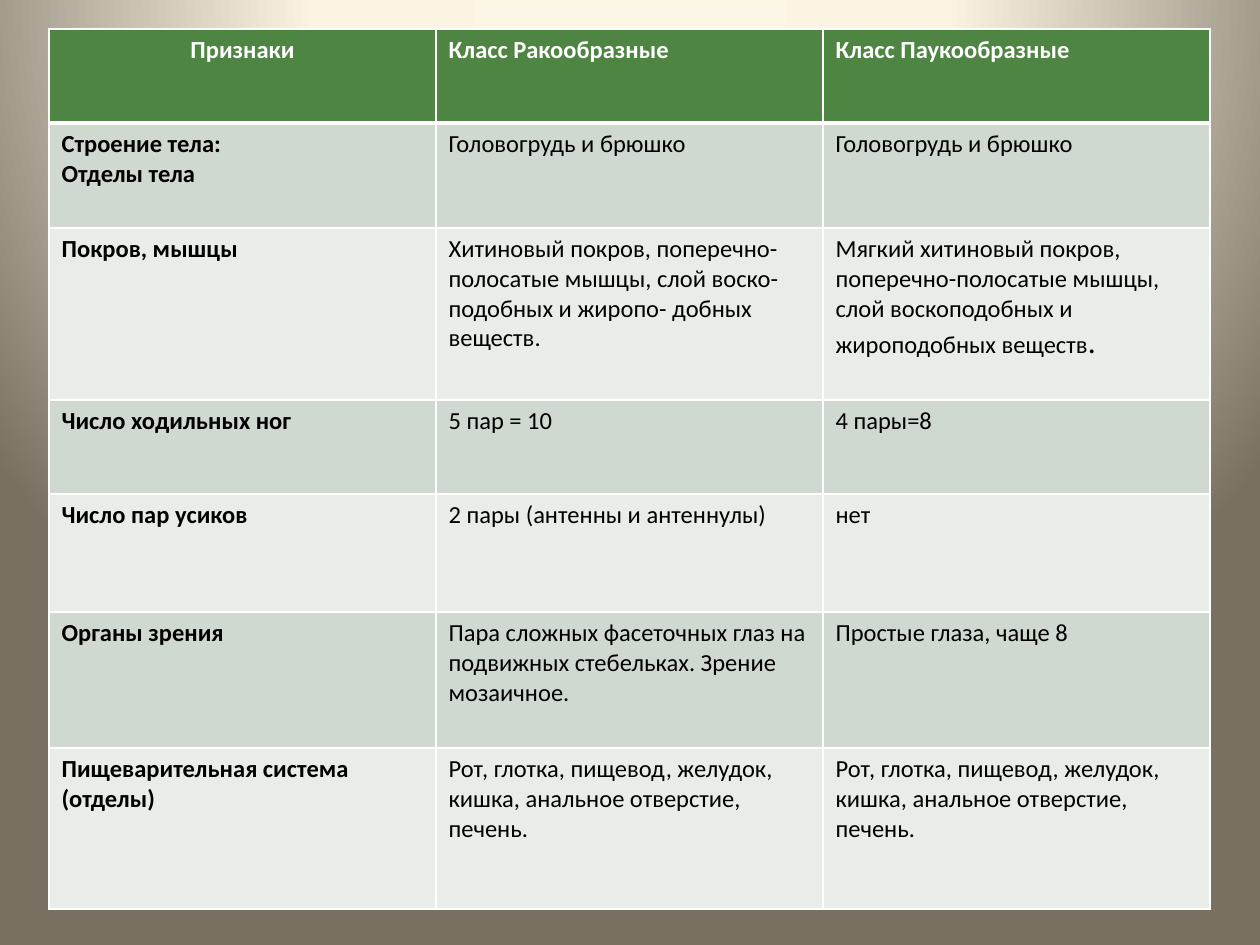
from typing import NamedTuple

from lxml.etree import SubElement as Sub
from pptx import Presentation
from pptx.dml.color import RGBColor as Rgb
from pptx.enum.text import PP_ALIGN as Align
from pptx.oxml import parse_xml
from pptx.oxml.ns import nsdecls, qn
from pptx.util import Emu, Pt

WHITE = Rgb(0xFF, 0xFF, 0xFF)
BLACK = Rgb(0x00, 0x00, 0x00)
GREEN = Rgb(0x4E, 0x85, 0x42)
SAGE = Rgb(0xD0, 0xD9, 0xCF)
PALE = Rgb(0xE9, 0xED, 0xE9)
GLOW = [(0, Rgb(0xFC, 0xF6, 0xE6)), (40, Rgb(0xFB, 0xF4, 0xE2)),
        (100, Rgb(0x78, 0x71, 0x61))]
FONT = "Calibri"
COLUMN = 387


class Row(NamedTuple):
    height: int
    trait: str
    crabs: str
    spiders: str


ROWS = [
    Row(94, "Признаки", "Класс Ракообразные", "Класс Паукообразные"),
    Row(105, "Строение тела:\nОтделы тела",
        "Головогрудь и брюшко", "Головогрудь и брюшко"),
    Row(172, "Покров, мышцы",
        "Хитиновый покров, поперечно-полосатые мышцы, слой воско-\n"
        "подобных и жиропо- добных веществ.",
        "Мягкий хитиновый покров, поперечно-полосатые мышцы, "
        "слой воскоподобных и жироподобных веществ"),
    Row(94, "Число ходильных ног", "5 пар = 10", "4 пары=8"),
    Row(118, "Число пар усиков", "2 пары (антенны и антеннулы)", "нет"),
    Row(136, "Органы зрения",
        "Пара сложных фасеточных глаз на подвижных стебельках. "
        "Зрение мозаичное.", "Простые глаза, чаще 8"),
    Row(161, "Пищеварительная система (отделы)",
        *["Рот, глотка, пищевод, желудок, кишка, анальное отверстие, печень."] * 2),
]


def px(count: int) -> Emu:
    return Emu(count * 914400 // 126)


def add_run(para, text: str, *, size=14, bold=False, color=BLACK) -> None:
    run = para.add_run()
    run.text = text
    font = run.font
    font.name, font.size, font.bold = FONT, Pt(size), bold
    font.color.rgb = color


def write(cell, text: str, *, align=None, **style) -> None:
    frame = cell.text_frame
    for i, line in enumerate(text.split("\n")):
        para = frame.add_paragraph() if i else frame.paragraphs[0]
        para.alignment = align
        add_run(para, line, **style)


def set_edges(cell, top: int, bottom: int) -> None:
    """Draw white cell borders; side borders are 1 pt wide."""
    props = cell._tc.get_or_add_tcPr()
    widths = {"lnL": 1, "lnR": 1, "lnT": top, "lnB": bottom}
    for i, (tag, width) in enumerate(widths.items()):
        line = parse_xml(f'<a:{tag} {nsdecls("a")} w="{Pt(width)}"/>')
        fill = Sub(line, qn("a:solidFill"))
        Sub(fill, qn("a:srgbClr"), val=str(WHITE))
        props.insert(i, line)


def set_glow(slide) -> None:
    """Fill the background with a round gradient centred above the slide."""
    stops = "".join(
        f'<a:gs pos="{at * 1000}"><a:srgbClr val="{color}"/></a:gs>'
        for at, color in GLOW)
    back = parse_xml(
        f'<p:bg {nsdecls("p", "a")}><p:bgPr><a:gradFill rotWithShape="1">'
        f'<a:gsLst>{stops}</a:gsLst><a:path path="circle">'
        '<a:fillToRect l="50000" t="-80000" r="50000" b="180000"/></a:path>'
        '</a:gradFill><a:effectLst/></p:bgPr></p:bg>')
    slide.element.cSld.insert(0, back)


def add_grid(slide, rows: list[Row]):
    high = sum(row.height for row in rows)
    table = slide.shapes.add_table(
        len(rows), 3, px(49), px(29), px(3 * COLUMN), px(high)).table
    table.horz_banding = False
    for column in table.columns:
        column.width = px(COLUMN)
    for r, row in enumerate(rows):
        table.rows[r].height = px(row.height)
        head = r == 0
        for c, text in enumerate(row[1:]):
            cell = table.cell(r, c)
            cell.fill.solid()
            cell.fill.fore_color.rgb = GREEN if head else SAGE if r % 2 else PALE
            set_edges(cell, top=3 if r == 1 else 1, bottom=3 if head else 1)
            write(cell, text, bold=head or c == 0,
                  color=WHITE if head else BLACK,
                  align=Align.CENTER if head and c == 0 else None)
    return table


def main() -> None:
    deck = Presentation()
    deck.slide_width, deck.slide_height = px(1260), px(945)
    slide = deck.slides.add_slide(deck.slide_layouts[6])
    set_glow(slide)
    table = add_grid(slide, ROWS)
    add_run(table.cell(2, 2).text_frame.paragraphs[0], ".", size=18)
    deck.save("out.pptx")


if __name__ == "__main__":
    main()
